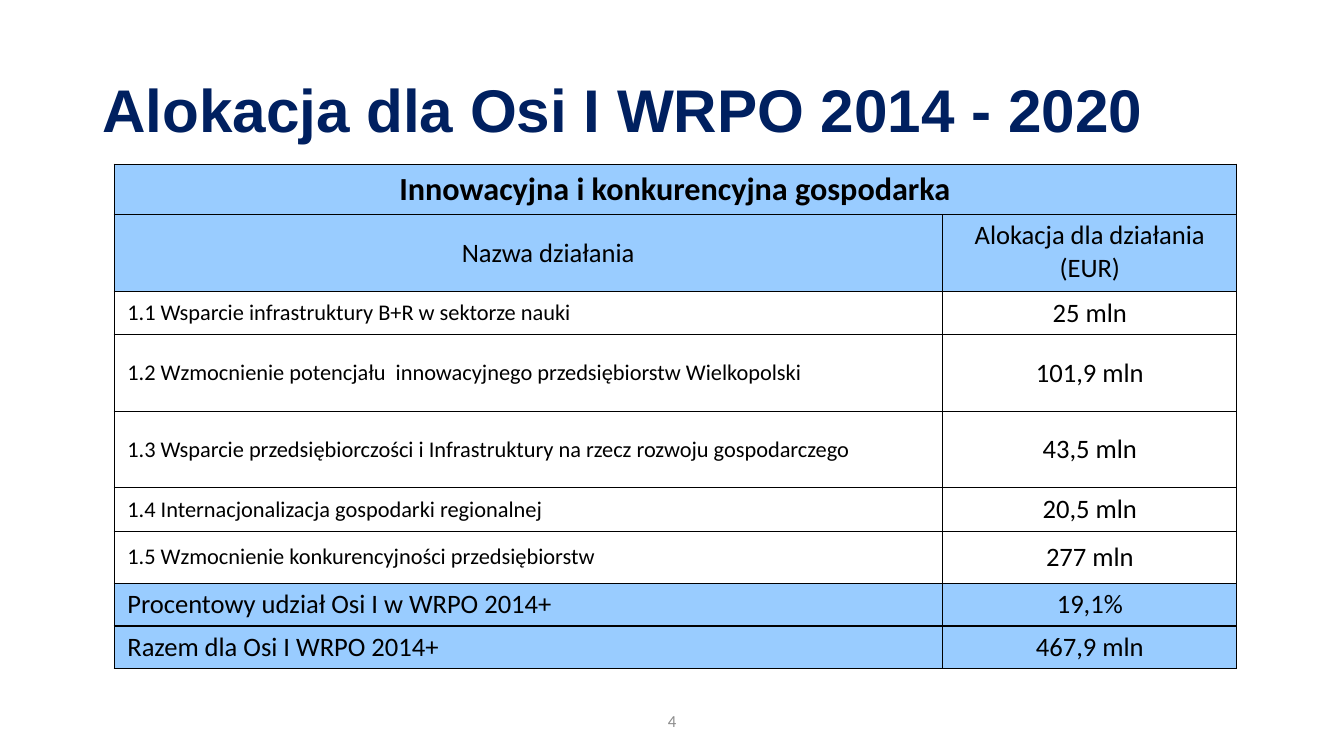
from lxml.etree import SubElement
from pptx import Presentation
from pptx.dml.color import RGBColor
from pptx.enum.text import MSO_ANCHOR, MSO_AUTO_SIZE, PP_ALIGN
from pptx.oxml.ns import qn
from pptx.util import Inches, Pt

NAVY, BLUE, WHITE, BLACK, GRAY = "002060", "99CCFF", "FFFFFF", "000000", "8C8C8C"
LEFT, CENTER = PP_ALIGN.LEFT, PP_ALIGN.CENTER
TOP, MIDDLE = MSO_ANCHOR.TOP, MSO_ANCHOR.MIDDLE


def rgb(color):
    return RGBColor.from_string(color)


class Deck:
    """Slide on a grid of 160 columns by 90 rows."""

    def __init__(self, font):
        self.font = font
        self.prs = Presentation()
        self.prs.slide_width = Inches(13.33)
        self.prs.slide_height = Inches(7.5)
        self.slide = self.prs.slides.add_slide(self.prs.slide_layouts[5])

    def x(self, columns):
        return round(self.prs.slide_width * columns / 160)

    def y(self, rows):
        return round(self.prs.slide_height * rows / 90)

    def set_text(self, tf, text, size, color, align=LEFT, bold=False, font=None):
        tf.word_wrap = True
        p = tf.paragraphs[0]
        p.text = text
        p.alignment = align
        p.font.name = font or self.font
        p.font.size = Pt(size)
        p.font.bold = bold
        p.font.color.rgb = rgb(color)
        return p

    def place(self, sp, left, top, width, height):
        sp.left, sp.top = self.x(left), self.y(top)
        sp.width, sp.height = self.x(width), self.y(height)

    def title(self, text, *box):
        sp = self.slide.shapes.title
        self.place(sp, *box)
        tf = sp.text_frame
        tf.auto_size = MSO_AUTO_SIZE.NONE
        tf.vertical_anchor = MIDDLE
        p = self.set_text(tf, text, 43, NAVY, bold=True, font="Arial")
        p.line_spacing = 0.9

    def label(self, text, *box):
        sp = self.slide.shapes.add_textbox(0, 0, 0, 0)
        self.place(sp, *box)
        sp.text_frame.vertical_anchor = MIDDLE
        self.set_text(sp.text_frame, text, 12, GRAY, CENTER)

    def table(self, left, top, widths, heights):
        frame = self.slide.shapes.add_table(
            len(heights), len(widths), self.x(left), self.y(top),
            self.x(sum(widths)), self.y(sum(heights)))
        table = frame.table
        table.first_row = table.horz_banding = False
        for column, width in zip(table.columns, widths):
            column.width = self.x(width)
        for row, height in zip(table.rows, heights):
            row.height = self.y(height)
        return table

    def cell(self, cell, text, size, fill, align=LEFT, anchor=MIDDLE, bold=False):
        cell.margin_left = cell.margin_right = Inches(0.13)
        cell.margin_top = cell.margin_bottom = Inches(0.05)
        cell.vertical_anchor = anchor
        self.borders(cell)
        cell.fill.solid()
        cell.fill.fore_color.rgb = rgb(fill)
        return self.set_text(cell.text_frame, text, size, BLACK, align, bold)

    def borders(self, cell):
        tcPr = cell._tc.get_or_add_tcPr()
        for side in ("lnL", "lnR", "lnT", "lnB"):
            ln = SubElement(tcPr, qn(f"a:{side}"), w=str(Pt(1)))
            SubElement(SubElement(ln, qn("a:solidFill")), qn("a:srgbClr"), val=BLACK)


# Each row: height, name, amount, name size, fill, amount anchor
ROWS = [
    (5.16, "1.1 Wsparcie infrastruktury B+R w sektorze nauki", "25 mln", 16, WHITE, MIDDLE),
    (9.12, "1.2 Wzmocnienie potencjału  innowacyjnego przedsiębiorstw Wielkopolski",
     "101,9 mln", 16, WHITE, MIDDLE),
    (9.12, "1.3 Wsparcie przedsiębiorczości i Infrastruktury na rzecz rozwoju gospodarczego",
     "43,5 mln", 16, WHITE, MIDDLE),
    (5.16, "1.4 Internacjonalizacja gospodarki regionalnej", "20,5 mln", 16, WHITE, MIDDLE),
    (6.24, "1.5 Wzmocnienie konkurencyjności przedsiębiorstw", "277 mln", 16, WHITE, MIDDLE),
    (4.92, "Procentowy udział Osi I w WRPO 2014+", "19,1%", 19, BLUE, TOP),
    (4.92, "Razem dla Osi I WRPO 2014+", "467,9 mln", 19, BLUE, TOP),
]


def main():
    deck = Deck("Calibri")

    # Title
    deck.title("Alokacja dla Osi I WRPO 2014 - 2020", 11, 4.8, 138, 17.4)

    # Table heading rows
    heights = [6, 9.12] + [row[0] for row in ROWS]
    table = deck.table(13.6, 19.56, [98.64, 35], heights)
    table.cell(0, 0).merge(table.cell(0, 1))
    deck.cell(table.cell(0, 0), "Innowacyjna i konkurencyjna gospodarka", 23, BLUE,
              CENTER, bold=True)
    deck.borders(table.cell(0, 1))
    p = deck.cell(table.cell(1, 0), "Nazwa działania", 19, BLUE, CENTER)
    p._p.get_or_add_pPr().set("marL", str(Inches(0.39)))
    deck.cell(table.cell(1, 1), "Alokacja dla działania (EUR)", 19, BLUE, CENTER, TOP)

    # Measures and totals
    for i, (_, name, amount, size, fill, anchor) in enumerate(ROWS, 2):
        deck.cell(table.cell(i, 0), name, size, fill)
        deck.cell(table.cell(i, 1), amount, 19, fill, CENTER, anchor)

    # Page number
    deck.label("4", 53, 83.4, 54, 4.8)

    deck.prs.save("out.pptx")


if __name__ == "__main__":
    main()
